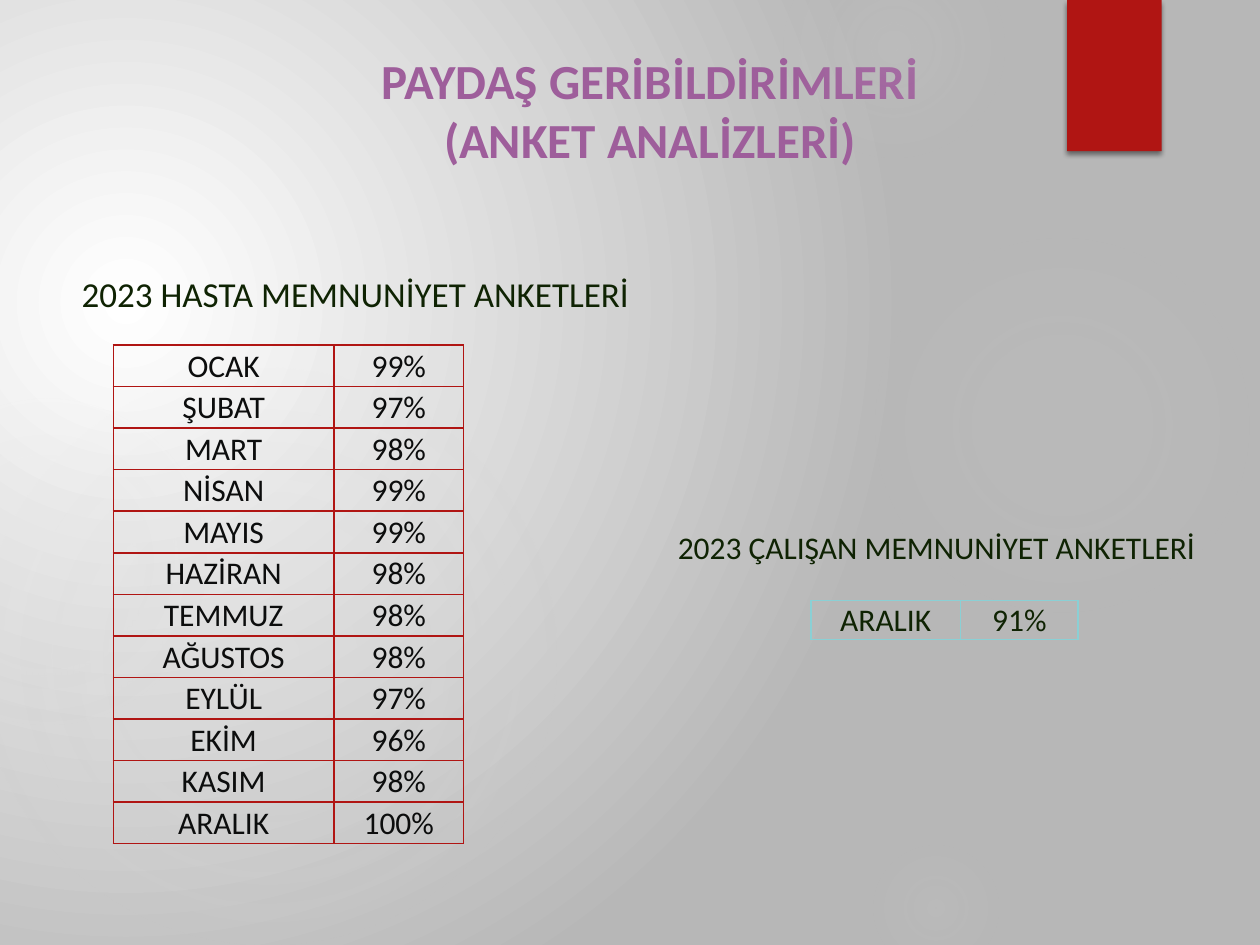
from lxml.etree import SubElement
from pptx import Presentation
from pptx.dml.color import RGBColor
from pptx.enum.shapes import MSO_SHAPE
from pptx.enum.text import MSO_ANCHOR, PP_ALIGN
from pptx.oxml.ns import qn
from pptx.util import Pt

OVAL, RECTANGLE = MSO_SHAPE.OVAL, MSO_SHAPE.RECTANGLE
LEFT, CENTER = PP_ALIGN.LEFT, PP_ALIGN.CENTER
TOP, MIDDLE = MSO_ANCHOR.TOP, MSO_ANCHOR.MIDDLE

WHITE = RGBColor(0xFF, 0xFF, 0xFF)
BACKDROP = RGBColor(0xB7, 0xB7, 0xB7)
GLOW = RGBColor(0xD9, 0xD9, 0xD9)
RED = RGBColor(0xB0, 0x15, 0x13)
PURPLE = RGBColor(0x9E, 0x5E, 0x9B)
GREEN = RGBColor(0x0F, 0x23, 0x03)
INK = RGBColor(0x0C, 0x0D, 0x0D)
TEAL = RGBColor(0x8A, 0xD0, 0xD5)
BLACK = RGBColor(0, 0, 0)
FONT = "Calibri"

TITLE = ["PAYDAŞ GERİBİLDİRİMLERİ", "(ANKET ANALİZLERİ)"]
HEADINGS = [
    ("2023 HASTA MEMNUNİYET ANKETLERİ", (39.6, 151.9, 340.6, 31.7), 20),
    ("2023 ÇALIŞAN MEMNUNİYET ANKETLERİ", (380.2, 298.1, 317.5, 28.8), 18),
]
PATIENT_SURVEYS = [
    ("OCAK", "99%"), ("ŞUBAT", "97%"), ("MART", "98%"), ("NİSAN", "99%"),
    ("MAYIS", "99%"), ("HAZİRAN", "98%"), ("TEMMUZ", "98%"), ("AĞUSTOS", "98%"),
    ("EYLÜL", "97%"), ("EKİM", "96%"), ("KASIM", "98%"), ("ARALIK", "100%"),
]
STAFF_SURVEYS = [("ARALIK", "91%")]
GLOWS = [
    (496, 132, 222, [(0, 7), (36, 6), (69, 0)]),
    (448, -36, 126, [(0, 14), (36, 7), (73, 0)]),
    (496, 480, 78, [(0, 9), (36, 5), (66, 0)]),
    (-12, 210, 330, [(0, 11), (36, 10), (75, 0)]),
    (-66, 228, 186, [(0, 8), (36, 8), (72, 0)]),
]


def add_color(parent, color, opacity=100):
    node = SubElement(parent, qn("a:srgbClr"), val=str(color))
    if opacity < 100:
        SubElement(node, qn("a:alpha"), val=str(opacity * 1000))


def radial_fill(fill, element, stops, focus):
    fill.gradient()
    gradient = element.find(".//" + qn("a:gradFill"))
    for child in list(gradient):
        gradient.remove(child)
    stop_list = SubElement(gradient, qn("a:gsLst"))
    for position, color, opacity in stops:
        stop = SubElement(stop_list, qn("a:gs"), pos=str(position * 1000))
        add_color(stop, color, opacity)
    circle = SubElement(gradient, qn("a:path"))
    circle.set("path", "circle")
    SubElement(circle, qn("a:fillToRect"),
               {side: str(value * 1000) for side, value in zip("ltrb", focus)})


def write(frame, lines, size, color, bold=False, align=LEFT, anchor=TOP):
    frame.word_wrap = True
    frame.vertical_anchor = anchor
    for index, line in enumerate(lines):
        paragraph = frame.paragraphs[0] if index == 0 else frame.add_paragraph()
        paragraph.alignment = align
        run = paragraph.add_run()
        run.text = line
        run.font.name, run.font.size, run.font.bold = FONT, Pt(size), bold
        run.font.color.rgb = color


def add_block(slide, kind, left, top, width, height):
    block = slide.shapes.add_shape(kind, Pt(left), Pt(top), Pt(width), Pt(height))
    block.shadow.inherit = False
    block.line.fill.background()
    return block


def add_borders(cell, color):
    properties = cell._tc.get_or_add_tcPr()
    for index, edge in enumerate(("a:lnL", "a:lnR", "a:lnT", "a:lnB")):
        line = SubElement(properties, qn(edge), w=str(Pt(1)))
        add_color(SubElement(line, qn("a:solidFill")), color)
        properties.insert(index, line)


def add_survey(slide, records, left, top, columns, row_height, text_color, border):
    table = slide.shapes.add_table(
        len(records), len(columns), Pt(left), Pt(top),
        Pt(sum(columns)), Pt(row_height * len(records))).table
    table.first_row = table.horz_banding = False
    for column, width in zip(table.columns, columns):
        column.width = Pt(width)
    for row, record in zip(table.rows, records):
        row.height = Pt(row_height)
        for cell, value in zip(row.cells, record):
            cell.margin_left = cell.margin_right = cell.margin_top = Pt(0.7)
            cell.margin_bottom = 0
            cell.vertical_anchor = MIDDLE
            cell.fill.background()
            write(cell.text_frame, [value], 18, text_color, align=CENTER, anchor=None)
            add_borders(cell, border)


def main():
    deck = Presentation()
    deck.slide_width, deck.slide_height = Pt(720), Pt(540)
    slide = deck.slides.add_slide(deck.slide_layouts[5])
    radial_fill(slide.background.fill, slide._element,
                [(0, WHITE, 100), (100, BACKDROP, 100)], (45, 65, 125, 100))

    for left, top, size, stops in GLOWS:
        glow = add_block(slide, OVAL, left, top, size, size)
        radial_fill(glow.fill, glow._element,
                    [(position, GLOW, opacity) for position, opacity in stops],
                    (50, 50, 50, 50))

    ribbon = add_block(slide, RECTANGLE, 609.8, 0, 54, 86.4)
    ribbon.fill.solid()
    ribbon.fill.fore_color.rgb = RED
    effects = ribbon._element.spPr.find(qn("a:effectLst"))
    shadow = SubElement(effects, qn("a:outerShdw"), blurRad=str(Pt(3)),
                        dist=str(Pt(2)), dir="5400000", rotWithShape="0")
    add_color(shadow, BLACK, 45)

    title = slide.shapes.title
    title.left, title.top, title.width, title.height = map(Pt, (156.2, 25.2, 430.6, 74.9))
    write(title.text_frame, TITLE, 28, PURPLE, bold=True, align=CENTER)

    for heading, area, size in HEADINGS:
        box = slide.shapes.add_textbox(*map(Pt, area))
        write(box.text_frame, [heading], size, GREEN)

    add_survey(slide, PATIENT_SURVEYS, 64.8, 197.1, (126, 74.2), 23.76, INK, RED)
    add_survey(slide, STAFF_SURVEYS, 463.3, 343.2, (85.7, 67), 22.3, GREEN, TEAL)
    deck.save("out.pptx")


if __name__ == "__main__":
    main()
